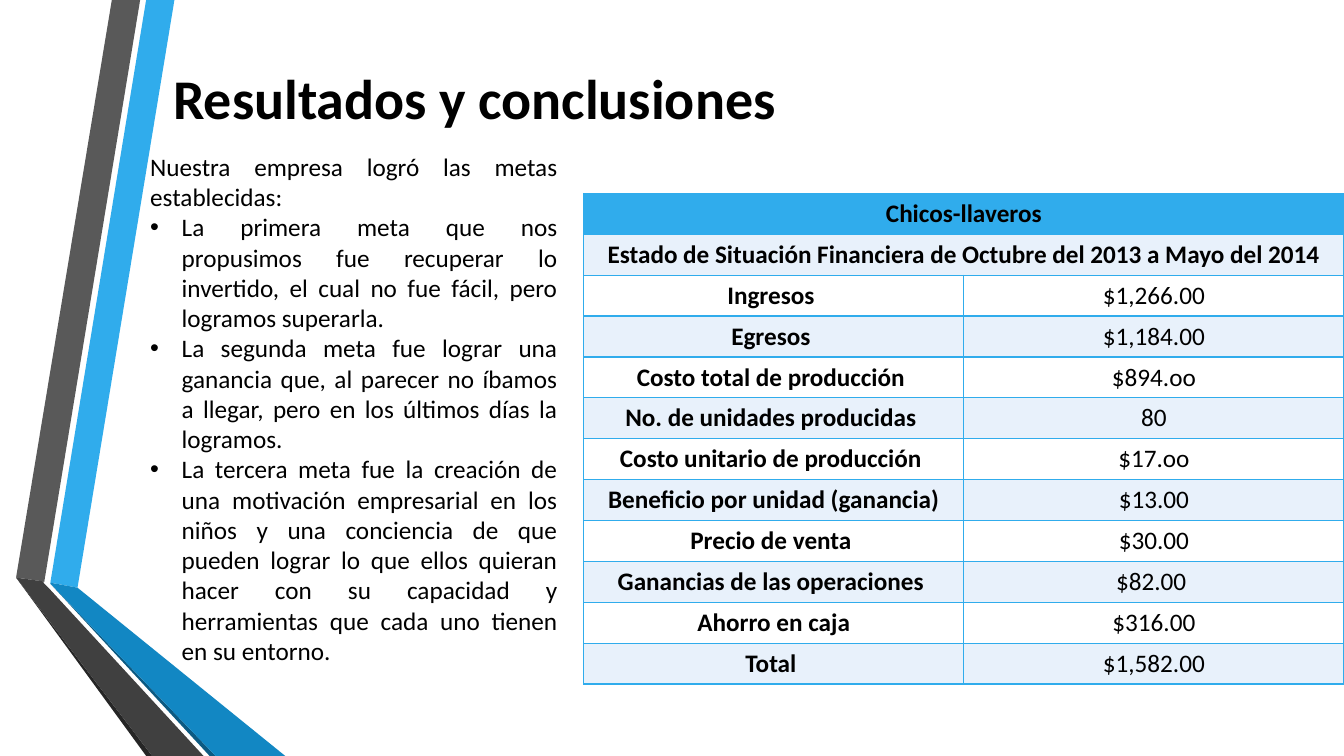
from typing import NamedTuple

from lxml import etree
from pptx import Presentation, oxml
from pptx.dml.color import RGBColor
from pptx.enum import text as tx
from pptx.oxml import ns
from pptx.util import Pt

FONT = "Calibri"
BLUE, PALE, WHITE, BLACK = "30ACEC", "E8F1FB", "FFFFFF", "000000"


class Band(NamedTuple):
    color: str
    points: list[tuple[float, float]]


class Box(NamedTuple):
    left: float
    top: float
    width: float
    height: float


class Entry(NamedTuple):
    label: str
    value: str


BANDS = [
    Band(BLUE, [(36, 416.2), (55.4, 419.8), (124.6, 0), (104.4, 0)]),
    Band("595959", [(100.1, 0), (79.9, 0), (11.5, 412.6), (31.7, 415.4)]),
    Band("262626", [(11.5, 412.6), (104.4, 540), (108.7, 540)]),
    Band("0C5A82", [(36, 416.9), (149.8, 540), (154.1, 540)]),
    Band("1287C3", [(36, 416.2), (36, 416.9), (154.1, 540), (203.8, 540), (55.4, 419.8)]),
    Band("404040", [(145.4, 540), (34.6, 419.8), (31, 416.2), (31.7, 415.4),
                    (11.5, 412.6), (108.7, 540)]),
]
TITLE = Box(116.6, 0, 789.1, 138.2)
BODY = Box(100.1, 104.4, 305.3, 399.6)
TABLE = Box(416.9, 138.2, 543.2, 350.4)
INDENT = 22.5

INTRO = "Nuestra empresa logró las metas establecidas:"
GOALS = [
    "La primera meta que nos propusimos fue recuperar lo invertido, el cual no fue "
    "fácil, pero logramos superarla.",
    "La segunda meta fue lograr una ganancia que, al parecer no íbamos a llegar, pero "
    "en los últimos días la logramos.",
    "La tercera meta fue la creación de una motivación empresarial en los niños y una "
    "conciencia de que pueden lograr lo que ellos quieran hacer con su capacidad y "
    "herramientas que cada uno tienen en su entorno.",
]
HEADS = [
    "Chicos-llaveros",
    "Estado de Situación Financiera de Octubre del 2013 a Mayo del 2014",
]
ENTRIES = [
    Entry("Ingresos ", "$1,266.00"),
    Entry("Egresos ", "$1,184.00"),
    Entry("Costo total de producción ", "$894.oo"),
    Entry("No. de unidades producidas ", "80"),
    Entry("Costo unitario de producción ", "$17.oo"),
    Entry("Beneficio por unidad (ganancia)", "$13.00"),
    Entry("Precio de venta ", "$30.00"),
    Entry("Ganancias de las operaciones ", "$82.00 "),
    Entry("Ahorro en caja", "$316.00"),
    Entry("Total ", "$1,582.00"),
]


def paint(fill, color: str) -> None:
    fill.solid()
    fill.fore_color.rgb = RGBColor.from_string(color)


def style(para, align, size: float = 18, bold: bool = False) -> None:
    para.alignment = align
    for run in para.runs:
        run.font.name, run.font.size, run.font.bold = FONT, Pt(size), bold
        paint(run.font.fill, BLACK)


def place(shape, box: Box) -> None:
    """Set the frame of a placeholder and bring it to the front."""
    shape.left, shape.top, shape.width, shape.height = map(Pt, box)
    shape.element.getparent().append(shape.element)


def draw_band(slide, band: Band) -> None:
    first, *rest = [(Pt(x), Pt(y)) for x, y in band.points]
    pen = slide.shapes.build_freeform(*first)
    pen.add_line_segments(rest)
    shape = pen.convert_to_shape()
    shape.shadow.inherit = False
    paint(shape.fill, band.color)
    shape.line.fill.background()


def set_bullet(para, shown: bool) -> None:
    props = para._p.get_or_add_pPr()
    props.set("marL", str(Pt(INDENT if shown else 0)))
    props.set("indent", str(Pt(-INDENT if shown else 0)))
    if shown:
        etree.SubElement(props, ns.qn("a:buFont")).set("typeface", "Arial")
        etree.SubElement(props, ns.qn("a:buChar")).set("char", "•")
    else:
        etree.SubElement(props, ns.qn("a:buNone"))


def add_title(slide) -> None:
    title = slide.shapes.title
    place(title, TITLE)
    frame = title.text_frame
    frame.text = "Resultados y conclusiones "
    frame.vertical_anchor = tx.MSO_ANCHOR.MIDDLE
    style(frame.paragraphs[0], tx.PP_ALIGN.JUSTIFY, 40, True)


def add_goals(slide) -> None:
    body = slide.placeholders[1]
    place(body, BODY)
    frame = body.text_frame
    frame.text = "\n".join([INTRO, *GOALS])
    frame.auto_size = tx.MSO_AUTO_SIZE.NONE
    frame.vertical_anchor = tx.MSO_ANCHOR.TOP
    for i, para in enumerate(frame.paragraphs):
        style(para, tx.PP_ALIGN.JUSTIFY)
        para.space_before = Pt(0)
        set_bullet(para, i > 0)


def fill_cell(cell, words: str, color: str, bold: bool) -> None:
    props = cell._tc.get_or_add_tcPr()
    for side in ("lnL", "lnR", "lnT", "lnB"):
        props.append(oxml.parse_xml(
            f'<a:{side} {ns.nsdecls("a")} w="{Pt(1)}"><a:solidFill>'
            f'<a:srgbClr val="{BLUE}"/></a:solidFill></a:{side}>'))
    paint(cell.fill, color)
    cell.text_frame.text = words
    style(cell.text_frame.paragraphs[0], tx.PP_ALIGN.CENTER, bold=bold)


def add_report(slide) -> None:
    rows = [Entry(head, "") for head in HEADS] + ENTRIES
    table = slide.shapes.add_table(len(rows), 2, *map(Pt, TABLE)).table
    table.first_row = table.horz_banding = False
    for i, entry in enumerate(rows):
        table.rows[i].height = Pt(TABLE.height / len(rows))
        color = BLUE if i == 0 else PALE if i % 2 else WHITE
        for j, words in enumerate(entry):
            fill_cell(table.cell(i, j), words, color, j == 0)
        if i < len(HEADS):
            table.cell(i, 0).merge(table.cell(i, 1))


def main() -> None:
    deck = Presentation()
    deck.slide_width, deck.slide_height = Pt(960), Pt(540)
    slide = deck.slides.add_slide(deck.slide_layouts[1])
    paint(slide.background.fill, WHITE)
    for band in BANDS:
        draw_band(slide, band)
    add_title(slide)
    add_report(slide)
    add_goals(slide)
    deck.save("out.pptx")


if __name__ == "__main__":
    main()
